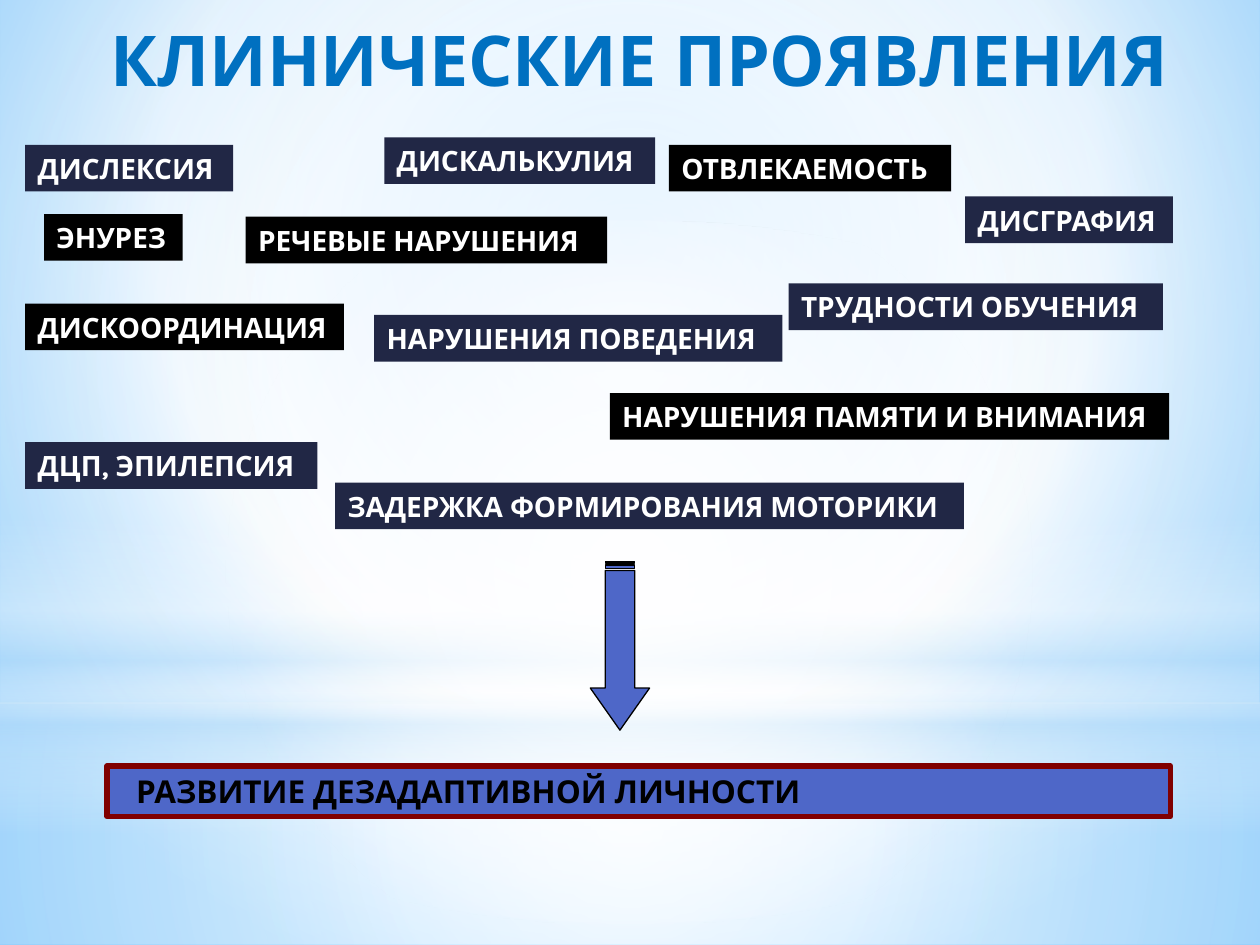
from lxml import etree
from pptx import Presentation
from pptx.dml.color import RGBColor
from pptx.enum import shapes, text
from pptx.oxml import ns
from pptx.util import Inches, Pt

FONT, NAVY, BLACK, BLUE, WHITE = "Karla", "212745", "000000", "4E67C8", "FFFFFF"
SKY = "B4DCFA"
CENTER = (50, 50, 50, 50)


def rgb(color):
    return RGBColor.from_string(color)


def set_gradient(props, stops, focus=None):
    """Swap the solid fill for a gradient: circular around focus, else top to bottom."""
    gs = "".join(
        f'<a:gs pos="{pos * 1000}"><a:srgbClr val="{color}">'
        f'<a:alpha val="{alpha * 1000}"/></a:srgbClr></a:gs>'
        for pos, color, alpha in stops)
    if focus:
        sides = " ".join(f'{k}="{v * 1000}"' for k, v in zip("ltrb", focus))
        shade = f'<a:path path="circle"><a:fillToRect {sides}/></a:path>'
    else:
        shade = '<a:lin ang="5400000" scaled="0"/>'
    solid = props.find(ns.qn("a:solidFill"))
    props.replace(solid, etree.fromstring(
        f'<a:gradFill {ns.nsdecls("a")} rotWithShape="1">'
        f'<a:gsLst>{gs}</a:gsLst>{shade}</a:gradFill>'))


prs = Presentation()
prs.slide_width, prs.slide_height = Inches(10), Inches(7.5)
s = prs.slides.add_slide(prs.slide_layouts[6])
SHAPE = shapes.MSO_SHAPE

# Background
s.background.fill.solid()
set_gradient(s._element.cSld.bg.bgPr,
             [(0, "9ED5FF", 100), (60, WHITE, 100), (100, "5BB9FF", 100)],
             (20, 10, 20, 60))

# Soft light layers: shape, top, height, stops, focus
layers = [
    (SHAPE.RECTANGLE, 5.58, 1.92, [(0, WHITE, 91), (37, WHITE, 76), (100, SKY, 79)], CENTER),
    (SHAPE.RECTANGLE, 0, 5.58, [(0, WHITE, 89), (48, WHITE, 62), (100, SKY, 79)], CENTER),
    (SHAPE.RECTANGLE, 4.12, 2.5, [(0, WHITE, 0), (29, WHITE, 30), (45, SKY, 40),
                                  (55, WHITE, 26), (65, SKY, 60), (100, WHITE, 0)], None),
    (SHAPE.OVAL, 1.75, 5.58, [(0, WHITE, 100), (56, WHITE, 0)], CENTER),
]
for kind, top, height, stops, focus in layers:
    sp = s.shapes.add_shape(kind, 0, Inches(top), Inches(10), Inches(height))
    sp.shadow.inherit = False
    sp.line.fill.background()
    sp.fill.solid()
    set_gradient(sp._element.spPr, stops, focus)

# Labels, title and conclusion: text, left, top, width, height, fill, size, colour
symptoms = [
    ("ДИСКООРДИНАЦИЯ", 0.2, 2.41, 2.53, BLACK),
    ("РЕЧЕВЫЕ НАРУШЕНИЯ", 1.95, 1.72, 2.87, BLACK),
    ("ДИСЛЕКСИЯ", 0.2, 1.15, 1.65, NAVY),
    ("ДИСГРАФИЯ", 7.66, 1.56, 1.65, NAVY),
    ("ДИСКАЛЬКУЛИЯ", 3.05, 1.09, 2.15, NAVY),
    ("ТРУДНОСТИ ОБУЧЕНИЯ", 6.26, 2.25, 2.97, NAVY),
    ("НАРУШЕНИЯ ПАМЯТИ И ВНИМАНИЯ", 4.84, 3.12, 4.44, BLACK),
    ("ЗАДЕРЖКА ФОРМИРОВАНИЯ МОТОРИКИ", 2.66, 3.83, 4.99, NAVY),
    ("ОТВЛЕКАЕМОСТЬ", 5.31, 1.15, 2.24, BLACK),
    ("НАРУШЕНИЯ ПОВЕДЕНИЯ", 2.97, 2.5, 3.24, NAVY),
    ("ЭНУРЕЗ", 0.35, 1.7, 1.1, BLACK),
    ("ДЦП, ЭПИЛЕПСИЯ", 0.2, 3.51, 2.32, NAVY),
]
boxes = [(*symptom[:4], 0.37, symptom[4], 16, WHITE) for symptom in symptoms]
boxes += [
    ("КЛИНИЧЕСКИЕ ПРОЯВЛЕНИЯ", 0.78, 0.08, 8.85, 0.77, None, 40, "0070C0"),
    ("РАЗВИТИЕ ДЕЗАДАПТИВНОЙ ЛИЧНОСТИ", 0.85, 6.08, 8.44, 0.4, BLUE, 18, BLACK),
]
for words, left, top, width, height, fill, size, color in boxes:
    place = [Inches(v) for v in (left, top, width, height)]
    if fill:
        sp = s.shapes.add_shape(SHAPE.RECTANGLE, *place)
        sp.shadow.inherit = False
        sp.fill.solid()
        sp.fill.fore_color.rgb = rgb(fill)
        sp.line.fill.background()
    else:
        sp = s.shapes.add_textbox(*place)
    tf = sp.text_frame
    frame = {"word_wrap": True, "vertical_anchor": text.MSO_ANCHOR.MIDDLE,
             "margin_top": 0, "margin_bottom": 0}
    for name, value in frame.items():
        setattr(tf, name, value)
    p = tf.paragraphs[0]
    p.alignment = text.PP_ALIGN.LEFT
    r = p.add_run()
    r.text = words
    for name, value in {"name": FONT, "size": Pt(size), "bold": True}.items():
        setattr(r.font, name, value)
    r.font.color.rgb = rgb(color)

# Frame and indent of the conclusion, the last box
sp.line.color.rgb = rgb("800000")
sp.line.width = Pt(3)
tf.margin_left = Inches(0.23)

# Striped arrow pointing down to the conclusion
sp = s.shapes.add_shape(SHAPE.STRIPED_RIGHT_ARROW, Inches(4.25), Inches(4.89),
                        Inches(1.34), Inches(0.47))
sp.rotation = 90
sp.adjustments[0], sp.adjustments[1] = 0.5, 0.71
sp.shadow.inherit = False
sp.fill.solid()
sp.fill.fore_color.rgb = rgb(BLUE)
sp.line.color.rgb = rgb(BLACK)
sp.line.width = Pt(0.75)

prs.save("out.pptx")
